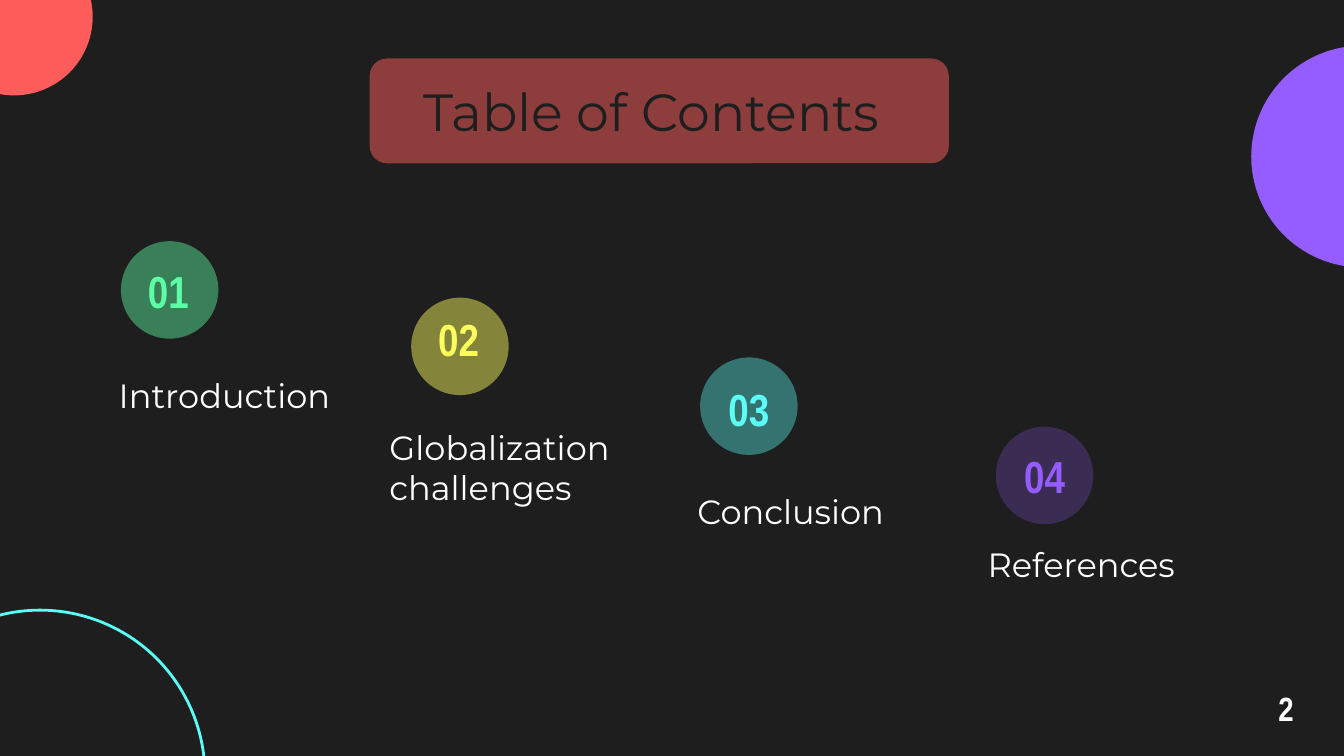
"""Build a dark table-of-contents slide with four stepped, numbered entries."""
from dataclasses import dataclass

from lxml.etree import SubElement
from pptx import Presentation
from pptx.dml.color import RGBColor
from pptx.enum.shapes import MSO_SHAPE
from pptx.enum.text import MSO_ANCHOR, PP_ALIGN
from pptx.oxml.ns import qn
from pptx.slide import Slide
from pptx.util import Emu, Inches, Pt

PX_PER_INCH = 200
DARK, WHITE = "1E1E1E", "FFFFFF"
RED, PURPLE, CYAN, GREEN, YELLOW = "FF5C5C", "955CFF", "5CFFF8", "5CFFA6", "FDFF5C"
BODY_FONT, NUMBER_FONT = "Montserrat", "Arial Narrow"
BADGE_SIZE = 145


@dataclass(frozen=True)
class Area:
    left: int
    top: int
    width: int
    height: int


@dataclass(frozen=True)
class TextStyle:
    font: str
    size: int
    color: str
    bold: bool = False
    centered: bool = False


@dataclass(frozen=True)
class Entry:
    title: str
    color: str
    opacity: int
    badge_left: int
    badge_top: int
    number_left: int
    number_top: int
    title_left: int
    title_top: int


ENTRIES = [
    Entry("Introduction", GREEN, 44, 180, 359, 178, 382, 157, 528),
    Entry("Globalization challenges", YELLOW, 46, 612, 443, 610, 454, 560, 635),
    Entry("Conclusion", CYAN, 38, 1042, 532, 1042, 558, 1018, 701),
    Entry("References", PURPLE, 24, 1482, 635, 1482, 658, 1450, 780),
]


def px(length: int) -> Emu:
    return Emu(length * Inches(1) // PX_PER_INCH)


def rgb(color: str) -> RGBColor:
    return RGBColor.from_string(color)


def frame(area: Area) -> tuple[Emu, Emu, Emu, Emu]:
    return px(area.left), px(area.top), px(area.width), px(area.height)


def add_filled(page: Slide, kind: MSO_SHAPE, area: Area, color: str, opacity: int = 100) -> None:
    shape = page.shapes.add_shape(kind, *frame(area))
    shape.shadow.inherit = False
    shape.line.fill.background()
    shape.fill.solid()
    shape.fill.fore_color.rgb = rgb(color)
    if opacity < 100:
        color_node = shape.element.spPr.find(qn("a:solidFill"))[0]
        SubElement(color_node, qn("a:alpha"), val=str(opacity * 1000))


def add_ring(page: Slide, area: Area, color: str, width: float) -> None:
    ring = page.shapes.add_shape(MSO_SHAPE.OVAL, *frame(area))
    ring.shadow.inherit = False
    ring.fill.background()
    ring.line.color.rgb = rgb(color)
    ring.line.width = Pt(width)


def add_text(page: Slide, area: Area, text: str, style: TextStyle) -> None:
    box = page.shapes.add_textbox(*frame(area))
    content = box.text_frame
    content.word_wrap = True
    content.vertical_anchor = MSO_ANCHOR.MIDDLE
    content.margin_left = content.margin_right = px(20)
    content.margin_top = content.margin_bottom = px(20)
    para = content.paragraphs[0]
    para.alignment = PP_ALIGN.CENTER if style.centered else PP_ALIGN.LEFT
    span = para.add_run()
    span.text = text
    span.font.name = style.font
    span.font.size = Pt(style.size)
    span.font.bold = style.bold
    span.font.color.rgb = rgb(style.color)


def add_entry(page: Slide, number: int, entry: Entry) -> None:
    badge = Area(entry.badge_left, entry.badge_top, BADGE_SIZE, BADGE_SIZE)
    add_filled(page, MSO_SHAPE.OVAL, badge, entry.color, entry.opacity)
    add_text(page, Area(entry.title_left, entry.title_top, 394, 120), entry.title,
             TextStyle(BODY_FONT, 18, WHITE))
    add_text(page, Area(entry.number_left, entry.number_top, BADGE_SIZE, 100), f"{number:02d}",
             TextStyle(NUMBER_FONT, 24, entry.color, bold=True, centered=True))


def main() -> None:
    deck = Presentation()
    deck.slide_width, deck.slide_height = px(2000), px(1125)
    page = deck.slides.add_slide(deck.slide_layouts[6])
    page.background.fill.solid()
    page.background.fill.fore_color.rgb = rgb(DARK)

    add_filled(page, MSO_SHAPE.OVAL, Area(1862, 68, 330, 330), PURPLE)
    add_filled(page, MSO_SHAPE.OVAL, Area(-96, -92, 234, 234), RED)
    add_ring(page, Area(-186, 908, 491, 491), CYAN, 1.5)

    add_filled(page, MSO_SHAPE.ROUNDED_RECTANGLE, Area(550, 87, 862, 156), RED, 50)
    add_text(page, Area(610, 114, 762, 102), "Table of Contents", TextStyle(BODY_FONT, 28, DARK))

    for number, entry in enumerate(ENTRIES, start=1):
        add_entry(page, number, entry)

    add_text(page, Area(1854, 1020, 120, 68), "2",
             TextStyle(NUMBER_FONT, 18, WHITE, bold=True, centered=True))
    deck.save("out.pptx")


if __name__ == "__main__":
    main()
